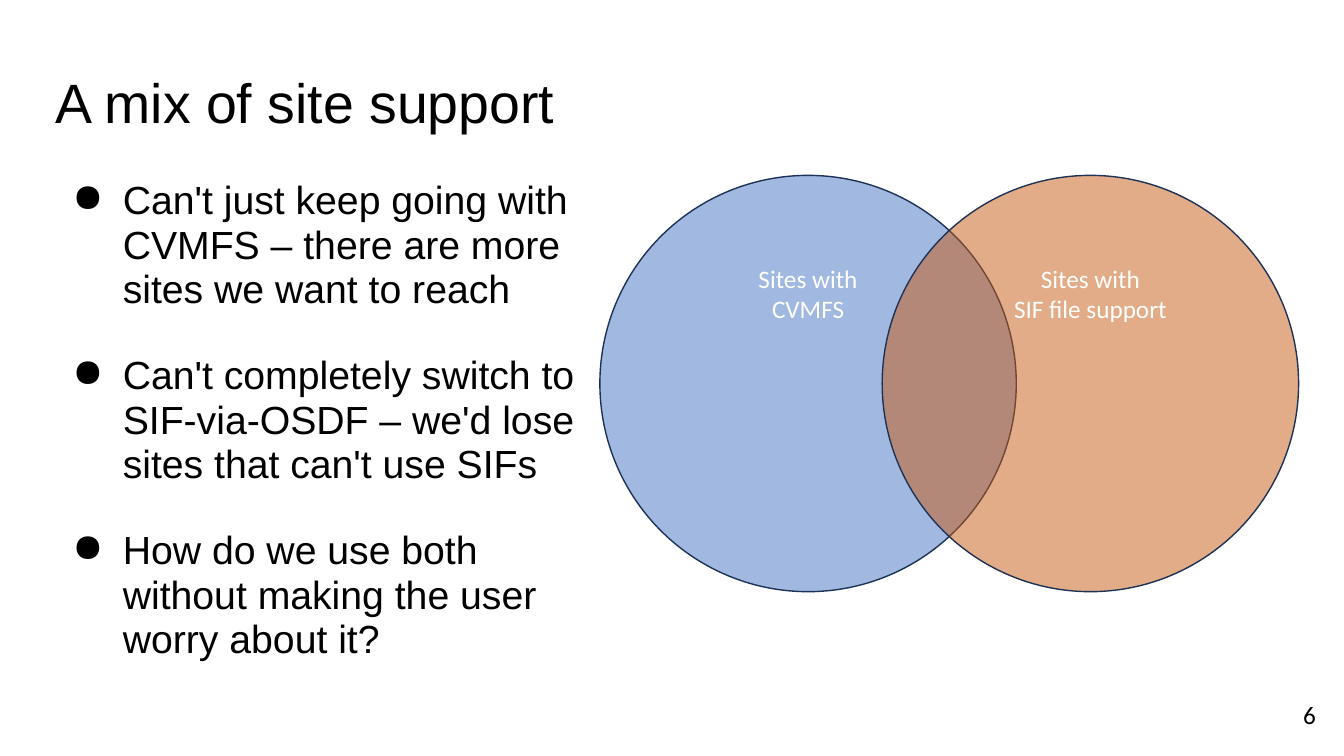
from lxml import etree
from pptx import Presentation
from pptx.dml.color import RGBColor
from pptx.enum.shapes import MSO_SHAPE
from pptx.enum.text import MSO_ANCHOR, PP_ALIGN
from pptx.oxml.ns import qn
from pptx.util import Inches, Pt

OVAL = MSO_SHAPE.OVAL
TOP, MIDDLE = MSO_ANCHOR.TOP, MSO_ANCHOR.MIDDLE
LEFT, CENTER, RIGHT = PP_ALIGN.LEFT, PP_ALIGN.CENTER, PP_ALIGN.RIGHT

COLORS = {
    "black": "000000", "white": "FFFFFF", "outline": "1E3256",
    "blue": "4472C4", "orange": "C55A11",
}
TITLE = "A mix of site support"
BULLETS = [
    "Can't just keep going with CVMFS – there are more sites we want to reach",
    "Can't completely switch to SIF-via-OSDF – we'd lose sites that can't use SIFs",
    "How do we use both without making the user worry about it?",
]
CIRCLES = [
    (["Sites with", "CVMFS"], "blue"),
    (["Sites with", "SIF file support"], "orange"),
]
PAGE_NUMBER = "6"

CIRCLE_LEFT, CIRCLE_TOP, DIAMETER, CIRCLE_STEP = 5.95, 1.74, 4.13, 2.8
LABEL_BOTTOM_INSET = 1.83  # lifts the labels into the upper half
BULLET_GAP = 30.2


def rgb(name):
    return RGBColor.from_string(COLORS[name])


def write(shape, lines, size, font, color="black", align=LEFT, anchor=TOP,
          spacing=None, inset=0.1):
    frame = shape.text_frame
    frame.word_wrap = True
    frame.vertical_anchor = anchor
    frame.margin_left = frame.margin_right = Inches(inset)
    frame.margin_top = frame.margin_bottom = Inches(inset)
    frame.text = "\n".join(lines)
    for paragraph in frame.paragraphs:
        paragraph.alignment = align
        paragraph.line_spacing = spacing
        paragraph.font.size = Pt(size)
        paragraph.font.name = font
        paragraph.font.color.rgb = rgb(color)
    return frame


def add_text(slide, box, *args, **options):
    shape = slide.shapes.add_textbox(*map(Inches, box))
    write(shape, *args, **options)
    return shape


def add_bullets(slide):
    shape = slide.shapes.add_textbox(*map(Inches, (0.45, 1.68, 5.46, 4.98)))
    shape.fill.solid()
    shape.fill.fore_color.rgb = rgb("white")
    shape.text_frame.text = "\n".join(BULLETS)
    frame = write(shape, BULLETS, 28, "Arial", spacing=0.94)
    for index, paragraph in enumerate(frame.paragraphs):
        if index:
            paragraph.space_before = Pt(BULLET_GAP)
        properties = paragraph._p.get_or_add_pPr()
        properties.set("marL", str(Inches(0.67)))
        properties.set("indent", str(Inches(-0.5)))
        bullet = etree.Element(qn("a:buChar"), char="●")
        properties.find(qn("a:defRPr")).addprevious(bullet)


def add_circle(group, index, label, color):
    left = CIRCLE_LEFT + index * CIRCLE_STEP
    circle = group.shapes.add_shape(
        OVAL, Inches(left), Inches(CIRCLE_TOP), Inches(DIAMETER), Inches(DIAMETER))
    circle.shadow.inherit = False
    circle.fill.solid()
    circle.fill.fore_color.rgb = rgb(color)
    fill_color = circle._element.spPr.find(qn("a:solidFill"))[0]
    etree.SubElement(fill_color, qn("a:alpha"), val="50000")
    circle.line.color.rgb = rgb("outline")
    circle.line.width = Pt(1)
    frame = write(circle, label, 18, "Calibri", "white", CENTER, MIDDLE, inset=0.05)
    frame.margin_bottom = Inches(LABEL_BOTTOM_INSET)


def main():
    presentation = Presentation()
    presentation.slide_width = Inches(13.33)
    presentation.slide_height = Inches(7.5)
    slide = presentation.slides.add_slide(presentation.slide_layouts[6])

    add_text(slide, (0.45, 0.65, 12.42, 0.84), [TITLE], 39.6, "Arial", spacing=0.9)
    add_bullets(slide)
    venn = slide.shapes.add_group_shape()
    for index, (label, color) in enumerate(CIRCLES):
        add_circle(venn, index, label, color)
    add_text(slide, (12.35, 6.8, 0.8, 0.57), [PAGE_NUMBER], 18, "Calibri",
             align=RIGHT, anchor=MIDDLE)

    presentation.save("out.pptx")


if __name__ == "__main__":
    main()
